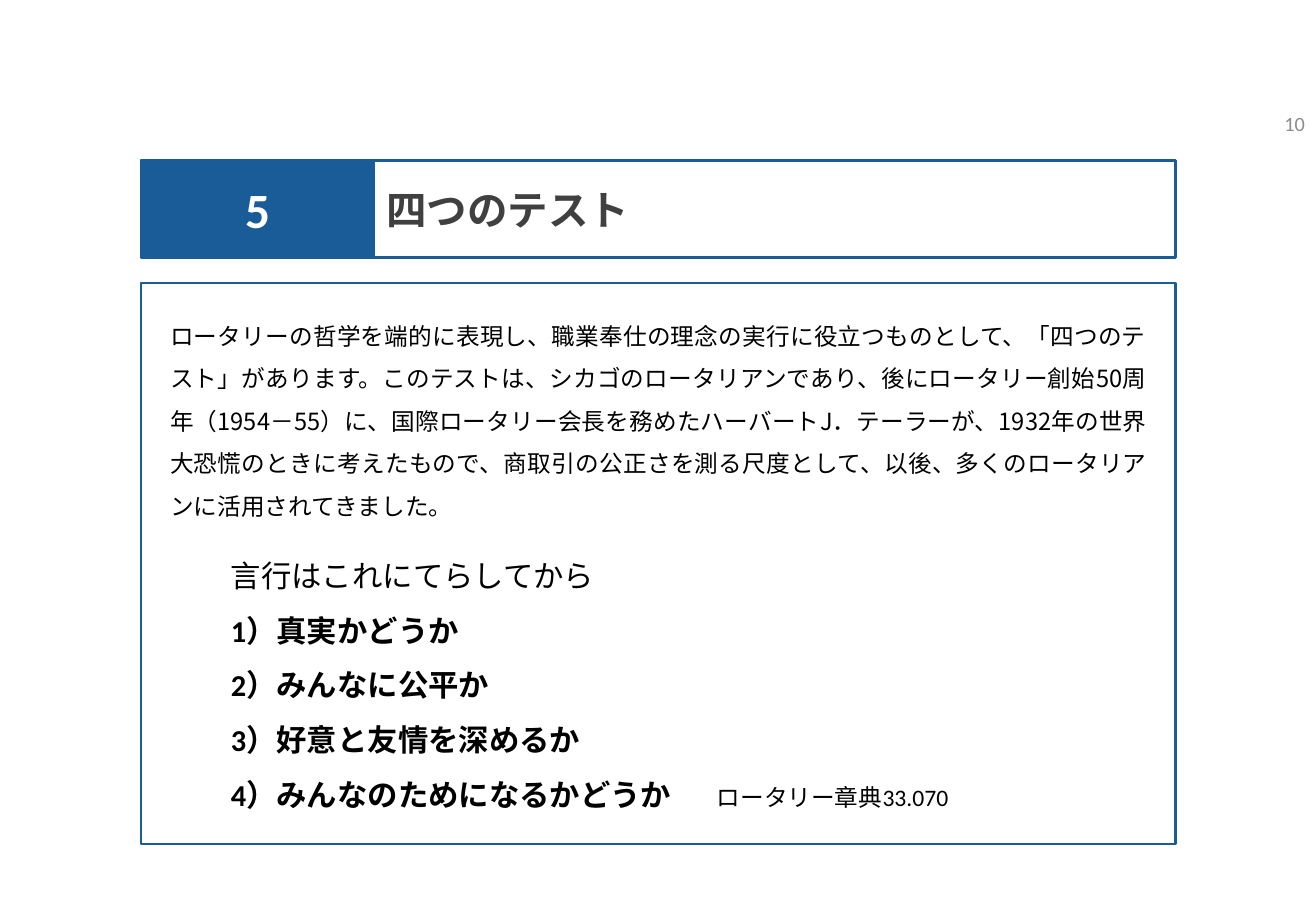
from dataclasses import dataclass

from lxml.etree import SubElement
from pptx import Presentation
from pptx.dml.color import RGBColor as RGB
from pptx.enum.shapes import MSO_SHAPE as SHAPE
from pptx.enum.text import MSO_ANCHOR as ANCHOR, MSO_AUTO_SIZE as AUTO, PP_ALIGN as ALIGN
from pptx.oxml.ns import qn
from pptx.util import Pt


@dataclass(frozen=True)
class Theme:
    """Colours, fonts and type sizes of the slide."""
    blue: RGB = RGB(0x19, 0x5C, 0x97)
    white: RGB = RGB(0xFF, 0xFF, 0xFF)
    black: RGB = RGB(0, 0, 0)
    dark: RGB = RGB(0x40, 0x40, 0x40)
    grey: RGB = RGB(0x8C, 0x8C, 0x8C)
    latin: str = "Calibri"
    heading: str = "Roboto"
    japanese: str = "Noto Sans CJK JP"
    page: float = 12
    body: float = 14
    point: float = 18
    title: float = 24
    number: float = 29.2
    border: float = 1.5


class SlideBuilder:
    """Holds the theme and the current slide."""

    def __init__(self, slide, theme):
        """Keep the slide and its theme."""
        self.s, self.t = slide, theme

    def place(self, sp, box, **frame):
        """Move a shape and format its text frame."""
        for name, value in zip(("left", "top", "width", "height"), box):
            setattr(sp, name, Pt(value))
        tf = sp.text_frame
        fmt = {"word_wrap": True, "auto_size": AUTO.NONE, "vertical_anchor": ANCHOR.MIDDLE}
        for name, value in {**fmt, **frame}.items():
            setattr(tf, name, value)
        return tf

    def outline(self, sp, fill):
        """Fill a shape and give it the blue border."""
        sp.fill.solid()
        sp.fill.fore_color.rgb = fill
        sp.line.color.rgb = self.t.blue
        sp.line.width = Pt(self.t.border)

    def run(self, p, text, size, color, font=None, bold=False):
        """Add a formatted run to a paragraph."""
        r = p.add_run()
        r.text = text
        fmt = {"name": font or self.t.latin, "size": Pt(size), "bold": bold}
        for name, value in fmt.items():
            setattr(r.font, name, value)
        r.font.color.rgb = color
        SubElement(r.font._element, qn("a:ea")).set("typeface", self.t.japanese)

    def page_number(self, text, box):
        """Add the page number."""
        tf = self.place(self.s.shapes.add_textbox(0, 0, 0, 0), box)
        p = tf.paragraphs[0]
        p.alignment = ALIGN.RIGHT
        self.run(p, text, self.t.page, self.t.grey)

    def section_number(self, text, box):
        """Add the filled block with the section number."""
        sp = self.s.shapes.add_shape(SHAPE.RECTANGLE, 0, 0, 0, 0)
        sp.shadow.inherit = False
        self.outline(sp, self.t.blue)
        p = self.place(sp, box).paragraphs[0]
        p.alignment = ALIGN.CENTER
        self.run(p, text, self.t.number, self.t.white, bold=True)

    def title(self, text, box):
        """Set the title placeholder."""
        sp = self.s.shapes.title
        self.outline(sp, self.t.white)
        p = self.place(sp, box).paragraphs[0]
        p.alignment = ALIGN.LEFT
        self.run(p, text, self.t.title, self.t.dark, self.t.heading, True)

    def body(self, box):
        """Set the body placeholder and return its text frame."""
        sp = self.s.placeholders[1]
        self.outline(sp, self.t.white)
        return self.place(sp, box, vertical_anchor=ANCHOR.TOP, margin_left=Pt(17.3),
                          margin_right=Pt(17.3), margin_top=Pt(14.4), margin_bottom=Pt(3.6))

    def paragraph(self, p, indent=0, tab=None, **fmt):
        """Format a body paragraph without a bullet."""
        base = {"alignment": ALIGN.JUSTIFY, "line_spacing": 1.5, "space_before": Pt(0)}
        for name, value in {**base, **fmt}.items():
            setattr(p, name, value)
        pPr = p._p.get_or_add_pPr()
        pPr.set("marL", str(Pt(indent)))
        pPr.set("indent", "0")
        SubElement(pPr, qn("a:buNone"))
        if tab:
            stop = SubElement(SubElement(pPr, qn("a:tabLst")), qn("a:tab"))
            stop.set("pos", str(Pt(tab)))
            stop.set("algn", "l")
        return p


INTRO = (
    "ロータリーの哲学を端的に表現し、職業奉仕の理念の実行に役立つものとして、「四つのテスト」があります。"
    "このテストは、シカゴのロータリアンであり、後にロータリー創始50周年（1954－55）に、"
    "国際ロータリー会長を務めたハーバートJ．テーラーが、1932年の世界大恐慌のときに考えたもので、"
    "商取引の公正さを測る尺度として、以後、多くのロータリアンに活用されてきました。"
)
TESTS = ("真実かどうか", "みんなに公平か", "好意と友情を深めるか", "みんなのためになるかどうか")
SOURCE = "ロータリー章典33.070"


def main():
    """Build and save the slide."""
    prs = Presentation()
    prs.slide_width, prs.slide_height = Pt(780), Pt(540)
    t = Theme()
    b = SlideBuilder(prs.slides.add_slide(prs.slide_layouts[1]), t)
    left, top, height, number_w, width = 83.5, 95, 57.6, 138.2, 613.4

    b.page_number("10", (604.8, 61.9, 175.7, 23))
    b.title("四つのテスト", (left + number_w, top, width - number_w, height))
    b.section_number("5", (left, top, number_w, height))

    tf = b.body((left, 167.8, width, 332.6))
    b.run(b.paragraph(tf.paragraphs[0]), INTRO, t.body, t.black, t.japanese)
    p = b.paragraph(tf.add_paragraph(), 36, level=1, line_spacing=1.0, space_before=Pt(22))
    b.run(p, "言行はこれにてらしてから", t.point, t.black)
    for i, test in enumerate(TESTS, 1):
        last = i == len(TESTS)
        p = b.paragraph(tf.add_paragraph(), 36, tab=391 if last else None, level=1)
        b.run(p, f"{i}）{test}" + ("\t" if last else ""), t.point, t.black, bold=True)
    b.run(p, SOURCE, t.body, t.black)
    prs.save("out.pptx")


if __name__ == "__main__":
    main()
